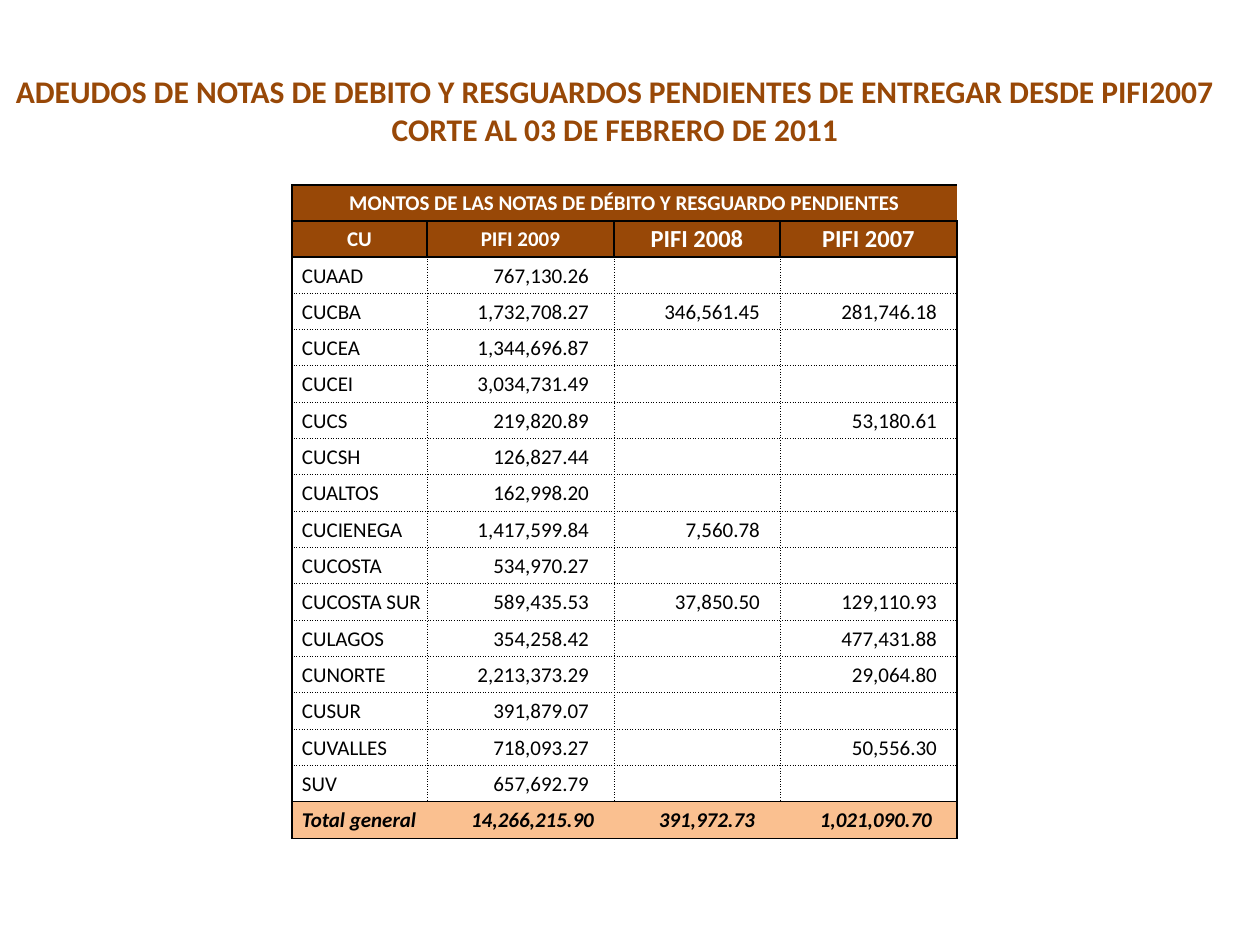
from dataclasses import dataclass
from typing import Optional

from lxml.etree import SubElement
from pptx import Presentation
from pptx.dml.color import RGBColor
from pptx.enum.text import MSO_ANCHOR, PP_ALIGN
from pptx.oxml.ns import qn
from pptx.util import Emu, Pt

PX = 914400 // 126
FONT = "Calibri"
BROWN = RGBColor(0x98, 0x48, 0x07)
PEACH = RGBColor(0xFA, 0xC0, 0x90)
WHITE = RGBColor(0xFF, 0xFF, 0xFF)
BLACK = RGBColor(0x00, 0x00, 0x00)


@dataclass(frozen=True)
class Border:
    width: float
    dash: str = "solid"


@dataclass(frozen=True)
class RowStyle:
    fill: RGBColor
    color: RGBColor
    inner: Optional[Border]
    bold: bool = False
    italic: bool = False
    centered: bool = False


SOLID, THIN, DOTTED = Border(1), Border(0.5), Border(0.5, "sysDot")
BANNER = RowStyle(BROWN, WHITE, None, bold=True, centered=True)
HEADER = RowStyle(BROWN, WHITE, SOLID, bold=True, centered=True)
BODY = RowStyle(WHITE, BLACK, DOTTED)
TOTAL = RowStyle(PEACH, BLACK, None, bold=True, italic=True)

TITLE = (
    "ADEUDOS DE NOTAS DE DEBITO Y RESGUARDOS PENDIENTES DE ENTREGAR DESDE PIFI2007",
    "CORTE AL 03 DE FEBRERO DE 2011",
)
COL_WIDTHS = (135, 187, 166, 177)
TABLE_LEFT, TABLE_TOP, TABLE_HEIGHT = 292, 185, 654
HEADER_SIZES = (12, 12, 14, 14)
BODY_INSETS = (5, 25, 20, 20)
TOTAL_INSETS = (0, 20, 25, 25)

CENTERS = (
    ("CUAAD", "767,130.26", "", ""),
    ("CUCBA", "1,732,708.27", "346,561.45", "281,746.18"),
    ("CUCEA", "1,344,696.87", "", ""),
    ("CUCEI", "3,034,731.49", "", ""),
    ("CUCS", "219,820.89", "", "53,180.61"),
    ("CUCSH", "126,827.44", "", ""),
    ("CUALTOS", "162,998.20", "", ""),
    ("CUCIENEGA", "1,417,599.84", "7,560.78", ""),
    ("CUCOSTA", "534,970.27", "", ""),
    ("CUCOSTA SUR", "589,435.53", "37,850.50", "129,110.93"),
    ("CULAGOS", "354,258.42", "", "477,431.88"),
    ("CUNORTE", "2,213,373.29", "", "29,064.80"),
    ("CUSUR", "391,879.07", "", ""),
    ("CUVALLES", "718,093.27", "", "50,556.30"),
    ("SUV", "657,692.79", "", ""),
)
ROWS = (
    (BANNER, ("MONTOS DE LAS NOTAS DE DÉBITO Y RESGUARDO PENDIENTES", "", "", "")),
    (HEADER, ("CU", "PIFI 2009", "PIFI 2008", "PIFI 2007")),
    *((BODY, center) for center in CENTERS),
    (TOTAL, ("Total general", "14,266,215.90", "391,972.73", "1,021,090.70")),
)


def px(n: int) -> Emu:
    return Emu(n * PX)


def add_run(p, text: str, size: int, color: RGBColor, bold: bool, italic: bool = False) -> None:
    r = p.add_run()
    r.text = text
    r.font.name = FONT
    r.font.size = Pt(size)
    r.font.color.rgb = color
    r.font.bold = bold
    r.font.italic = italic


def set_border(cell, side: str, border: Optional[Border]) -> None:
    """Draw one side (L, R, T or B) of a cell; None leaves it bare."""
    tc_pr = cell._tc.get_or_add_tcPr()
    if border is None:
        SubElement(SubElement(tc_pr, qn(f"a:ln{side}"), w="0"), qn("a:noFill"))
        return
    ln = SubElement(tc_pr, qn(f"a:ln{side}"), w=str(Pt(border.width)))
    SubElement(SubElement(ln, qn("a:solidFill")), qn("a:srgbClr"), val=str(BLACK))
    SubElement(ln, qn("a:prstDash"), val=border.dash)


def rule_above(row: int) -> Border:
    """Border on the top edge of a row; len(ROWS) means the table's foot."""
    if row <= 2 or row == len(ROWS):
        return SOLID
    return THIN if ROWS[row][0] is TOTAL else DOTTED


def fill_cell(cell, row: int, col: int) -> None:
    style, texts = ROWS[row]
    last = len(COL_WIDTHS) - 1
    set_border(cell, "L", SOLID if col == 0 else style.inner)
    set_border(cell, "R", SOLID if col == last else style.inner)
    set_border(cell, "T", rule_above(row))
    set_border(cell, "B", rule_above(row + 1))
    cell.fill.solid()
    cell.fill.fore_color.rgb = style.fill

    insets = TOTAL_INSETS if style is TOTAL else BODY_INSETS
    cell.margin_left = px(10 if col == 0 and not style.centered else 1)
    cell.margin_right = px(1 if style.centered else insets[col])
    cell.margin_top, cell.margin_bottom = px(1), px(0)
    cell.vertical_anchor = MSO_ANCHOR.MIDDLE

    p = cell.text_frame.paragraphs[0]
    if style.centered:
        p.alignment = PP_ALIGN.CENTER
    else:
        p.alignment = PP_ALIGN.LEFT if col == 0 else PP_ALIGN.RIGHT
    size = HEADER_SIZES[col] if style is HEADER else 12
    if texts[col]:
        add_run(p, texts[col], size, style.color, style.bold, style.italic)
    else:
        SubElement(p._p, qn("a:endParaRPr"), sz=str(size * 100))


def add_debt_table(s) -> None:
    count = len(ROWS)
    frame = s.shapes.add_table(count, len(COL_WIDTHS), px(TABLE_LEFT), px(TABLE_TOP),
                               px(sum(COL_WIDTHS)), px(TABLE_HEIGHT))
    table = frame.table
    table.first_row = table.horz_banding = False
    for column, width in zip(table.columns, COL_WIDTHS):
        column.width = px(width)
    for i, row in enumerate(table.rows):
        row.height = px(TABLE_HEIGHT * (i + 1) // count - TABLE_HEIGHT * i // count)
        for j, cell in enumerate(row.cells):
            fill_cell(cell, i, j)
    table.cell(0, 0).merge(table.cell(0, len(COL_WIDTHS) - 1))


def add_title(s) -> None:
    tf = s.shapes.add_textbox(px(-3), px(66), px(1236), px(89)).text_frame
    tf.word_wrap = False
    for i, line in enumerate(TITLE):
        p = tf.add_paragraph() if i else tf.paragraphs[0]
        p.alignment = PP_ALIGN.CENTER
        add_run(p, line, 18, BROWN, bold=True)


def main() -> None:
    prs = Presentation()
    prs.slide_width, prs.slide_height = px(1260), px(945)
    s = prs.slides.add_slide(prs.slide_layouts[6])
    add_debt_table(s)
    add_title(s)
    prs.save("out.pptx")


if __name__ == "__main__":
    main()
